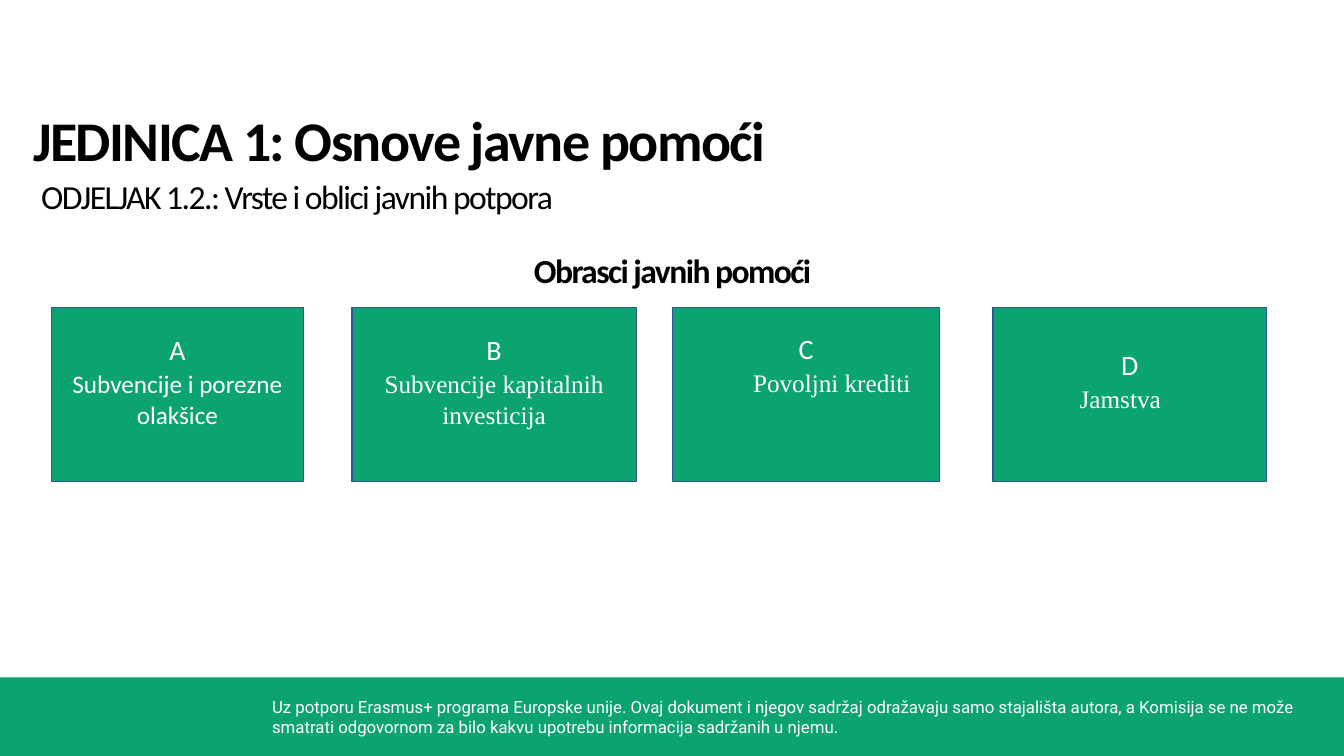
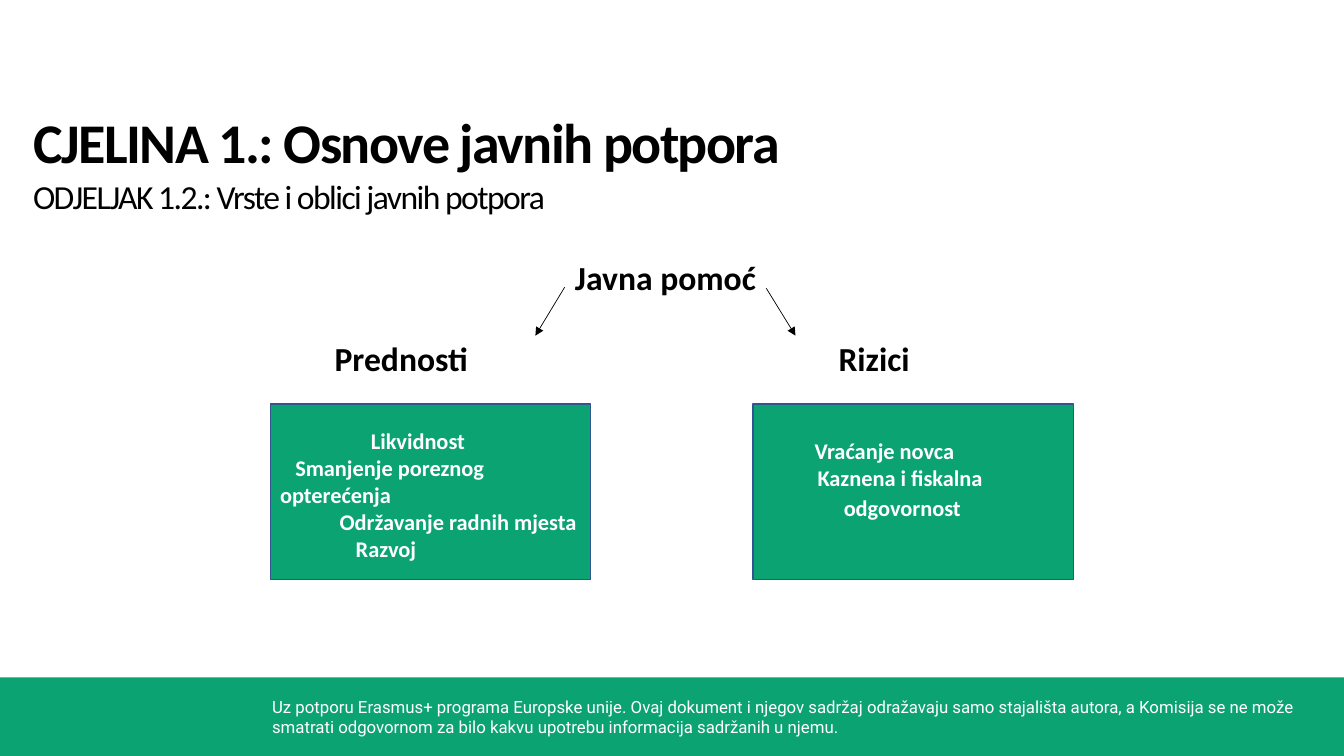
from dataclasses import dataclass

from lxml import etree
from pptx import Presentation
from pptx import util as u
from pptx.dml.color import RGBColor
from pptx.enum import shapes, text
from pptx.oxml.ns import qn

COLORS = {"green": "0CA373", "edge": "325491", "ink": "000000", "white": "FFFFFF"}
BODY, SERIF, FOOTER_FONT = "Calibri", "Times New Roman", "Roboto"
LEFT, CENTER = text.PP_ALIGN.LEFT, text.PP_ALIGN.CENTER
FOOTER = ("Uz potporu Erasmus+ programa Europske unije. Ovaj dokument i njegov sadržaj "
          "odražavaju samo stajališta autora, a Komisija se ne može smatrati odgovornom "
          "za bilo kakvu upotrebu informacija sadržanih u njemu.")


@dataclass
class Line:
    words: str
    size: float = 24
    bold: bool = False
    font: str = BODY
    color: str = "ink"
    spacing: float = 0       # letter spacing in points
    align: int = LEFT
    indent: float = 0        # first-line indent in inches
    before: float = 0
    height: float = 0        # exact line height in points


def rgb(name):
    return RGBColor.from_string(COLORS[name])


def write(tf, lines, top=0.05):
    """Fill a text frame, starting at the given distance from its top."""
    tf.word_wrap = True
    tf.vertical_anchor = text.MSO_ANCHOR.TOP
    tf.margin_top = u.Inches(top)
    for i, line in enumerate(lines):
        p = tf.add_paragraph() if i else tf.paragraphs[0]
        p.text = line.words
        p.alignment = line.align
        if line.before:
            p.space_before = u.Pt(line.before)
        if line.height:
            p.line_spacing = u.Pt(line.height)
        if line.indent:
            pPr = p._p.get_or_add_pPr()
            pPr.set("marL", "0")
            pPr.set("indent", str(u.Inches(line.indent)))
        r = p.runs[0]
        r.font.name, r.font.size, r.font.bold = line.font, u.Pt(line.size), line.bold
        r.font.color.rgb = rgb(line.color)
        if line.spacing:
            r._r.get_or_add_rPr().set("spc", str(round(line.spacing * 100)))


def add_text(s, box, *lines):
    tb = s.shapes.add_textbox(*map(u.Inches, box))
    write(tb.text_frame, lines)


def add_box(s, box, edge=None):
    sp = s.shapes.add_shape(shapes.MSO_SHAPE.RECTANGLE, *map(u.Inches, box))
    sp.shadow.inherit = False
    sp.fill.solid()
    sp.fill.fore_color.rgb = rgb("green")
    if edge:
        sp.line.color.rgb = rgb(edge)
        sp.line.width = u.Pt(1)
    else:
        sp.line.fill.background()
    return sp


def add_arrow(s, start, end):
    c = s.shapes.add_connector(shapes.MSO_CONNECTOR.STRAIGHT,
                               *map(u.Inches, (*start, *end)))
    c.line.color.rgb = rgb("ink")
    c.line.width = u.Pt(0.5)
    etree.SubElement(c.line._get_or_add_ln(), qn("a:tailEnd"), type="triangle")
    etree.SubElement(c._element.spPr, qn("a:effectLst"))


def add_frame(prs, title, subtitle, top, sub_left):
    """New slide with the shared title, subtitle and footer band."""
    s = prs.slides.add_slide(prs.slide_layouts[6])
    add_box(s, (0, 6.72, 13.33, 0.78))
    add_text(s, (2.6, 6.86, 10.42, 0.5),
             Line(FOOTER, 12, font=FOOTER_FONT, color="white"))
    add_text(s, (0.23, top, 12.9, 0.78), Line(title, 40, True, spacing=-1.1))
    add_text(s, (sub_left, 1.7, 12.8, 0.5), Line(subtitle, spacing=-1.1))
    return s


def add_card(s, box, letter, label, top, font=SERIF, indent=None):
    """Lettered card; the label is centred unless an indent is given."""
    sp = add_box(s, box, "edge")
    write(sp.text_frame, [
        Line(letter, 20, color="white", spacing=-1.1, align=CENTER),
        Line(label, 18, font=font, color="white", before=1.1, height=22,
             align=LEFT if indent else CENTER, indent=indent or 0),
    ], top)


def add_branch(s, box, heading, center, top, items):
    """Heading above a box of (text, indent, space before) items."""
    left, y, width, height = box
    add_text(s, (center - 1.5, y - 0.71, 3, 0.5), Line(heading, bold=True, align=CENTER))
    sp = add_box(s, box, "edge")
    write(sp.text_frame, [Line(words, 16, True, color="white", indent=indent, before=before)
                          for words, indent, before in items], top)


def forms_slide(prs):
    s = add_frame(prs, "JEDINICA 1: Osnove javne pomoći",
                  "ODJELJAK 1.2.: Vrste i oblici javnih potpora", 1, 0.31)
    add_text(s, (0.12, 2.43, 13.1, 0.5),
             Line("Obrasci javnih pomoći", bold=True, spacing=-1.1, align=CENTER))
    # Cards: left, width, letter, label, text top, font, label indent
    cards = [
        (0.51, 2.5, "A", "Subvencije i porezne olakšice", 0.25, BODY, None),
        (3.49, 2.82, "B", "Subvencije kapitalnih investicija", 0.25, SERIF, None),
        (6.67, 2.65, "C", "Povoljni krediti", 0.24, SERIF, 0.7),
        (9.85, 2.71, "D", "Jamstva", 0.4, SERIF, 0.76),
    ]
    for left, width, *content in cards:
        add_card(s, (left, 3.05, width, 1.73), *content)


def balance_slide(prs):
    s = add_frame(prs, "CJELINA 1.: Osnove javnih potpora",
                  "ODJELJAK 1.2.: Vrste i oblici javnih potpora", 1.02, 0.23)
    add_text(s, (5.1, 2.5, 3, 0.5), Line("Javna pomoć", bold=True, align=CENTER))
    # Two branches
    add_branch(s, (2.68, 4.01, 3.18, 1.74), "Prednosti", 3.98, 0.23, [
        ("Likvidnost", 0.9, 0),
        ("Smanjenje poreznog opterećenja", 0.15, 0),
        ("Održavanje radnih mjesta", 0.59, 0),
        ("Razvoj", 0.75, 0),
    ])
    add_branch(s, (7.47, 4.01, 3.18, 1.74), "Rizici", 8.67, 0.33, [
        ("Vraćanje novca", 0.51, 0),
        ("Kaznena i fiskalna", 0.54, 0),
        ("odgovornost", 0.8, 2),
    ])
    # Arrows from the topic to its branches
    add_arrow(s, (5.6, 2.85), (5.31, 3.33))
    add_arrow(s, (7.6, 2.86), (7.89, 3.33))


def main():
    prs = Presentation()
    prs.slide_width, prs.slide_height = u.Inches(13.33), u.Inches(7.5)
    forms_slide(prs)
    balance_slide(prs)
    prs.save("out.pptx")


if __name__ == "__main__":
    main()
